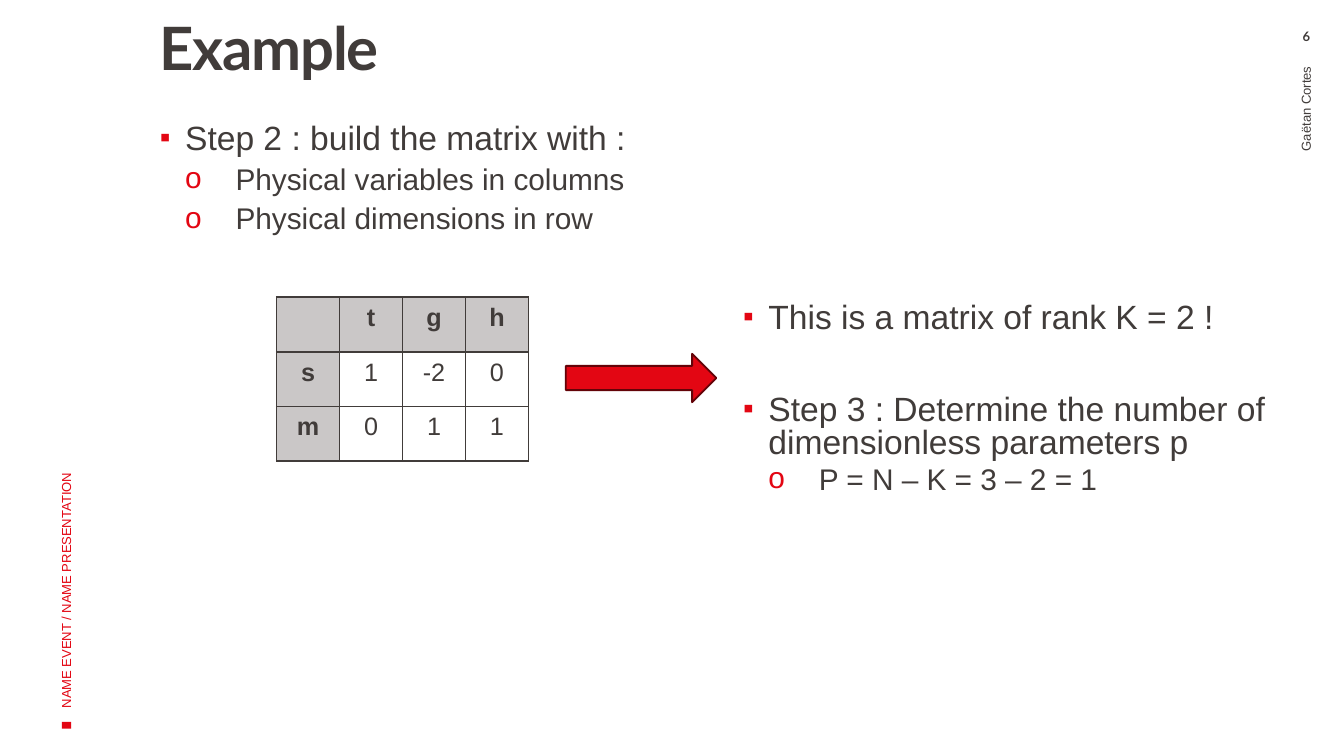
from lxml.etree import SubElement
from pptx import Presentation
from pptx.dml.color import RGBColor
from pptx.enum.shapes import MSO_SHAPE as Shape
from pptx.enum.text import MSO_ANCHOR as Anchor, MSO_AUTO_SIZE as AutoSize, PP_ALIGN as Align
from pptx.oxml.ns import qn
from pptx.util import Inches, Pt

WIDTH = Inches(10)
HEIGHT = WIDTH * 9 // 16
RED, DARK_RED, INK, GREY = "E30613", "630308", "413C3A", "CAC7C7"

STEP_TWO = [
    (0, "Step 2 : build the matrix with :", 0),
    (1, "Physical variables in columns", 3.8),
    (1, "Physical dimensions in row", 3.8),
]
STEP_THREE = [
    (0, "This is a matrix of rank K = 2 !", 0),
    (0, "Step 3 : Determine the number of dimensionless parameters p", 32),
    (1, "P = N – K = 3 – 2 = 1", 3.8),
]
MATRIX = [
    ["", "t", "g", "h"],
    ["s", "1", "-2", "0"],
    ["m", "0", "1", "1"],
]
LEVELS = [
    {"mark": "▪", "mark_size": 90, "margin": 13.5, "hang": 13.5, "size": 18},
    {"mark": "o", "mark_size": 100, "margin": 40.5, "hang": 27, "size": 16},
]


def color(value):
    return RGBColor.from_string(value)


def share(left, top, width, height):
    return (int(WIDTH * left / 100), int(HEIGHT * top / 100),
            int(WIDTH * width / 100), int(HEIGHT * height / 100))


def move(shape, area):
    shape.left, shape.top, shape.width, shape.height = share(*area)


def style(paragraph, size, tint=INK, bold=False, face="Arial"):
    font = paragraph.font
    font.name, font.size, font.bold = face, Pt(size), bold
    font.color.rgb = color(tint)


def set_frame(frame, insets, anchor=Anchor.TOP):
    frame.word_wrap = True
    frame.auto_size = AutoSize.NONE
    frame.vertical_anchor = anchor
    (frame.margin_left, frame.margin_top,
     frame.margin_right, frame.margin_bottom) = map(Inches, insets)


def add_bullet(paragraph, level):
    properties = paragraph._p.get_or_add_pPr()
    properties.set("marL", str(Pt(level["margin"])))
    properties.set("indent", str(-Pt(level["hang"])))
    tint = SubElement(properties, qn("a:buClr"))
    SubElement(tint, qn("a:srgbClr"), val=RED)
    SubElement(properties, qn("a:buSzPct"), val=str(level["mark_size"] * 1000))
    SubElement(properties, qn("a:buFont"), typeface="Arial")
    SubElement(properties, qn("a:buChar"), char=level["mark"])


def fill_title(title, text):
    move(title, (9.9, 2.49, 40.1, 20.82))
    set_frame(title.text_frame, (0.2, 0, 0.08, 0.05))
    paragraph = title.text_frame.paragraphs[0]
    run = paragraph.add_run()
    run.text = text
    run._r.get_or_add_rPr().set("spc", "-70")
    paragraph.alignment = Align.LEFT
    paragraph.line_spacing = 0.9
    style(paragraph, 32, bold=True, face="Lato")


def fill_list(body, area, items, line_spacing):
    move(body, area)
    frame = body.text_frame
    set_frame(frame, (0.2, 0.05, 0.1, 0.05))
    for index, (depth, text, space) in enumerate(items):
        paragraph = frame.paragraphs[0] if index == 0 else frame.add_paragraph()
        paragraph.text = text
        paragraph.level = depth
        paragraph.line_spacing = line_spacing
        paragraph.space_before = Pt(space)
        add_bullet(paragraph, LEVELS[depth])
        style(paragraph, LEVELS[depth]["size"])


def add_label(slide, area, text, align, tint=INK, rotation=0, bold=False,
              face="Arial", anchor=Anchor.MIDDLE, inset=0.05):
    label = slide.shapes.add_textbox(*share(*area))
    label.rotation = rotation
    set_frame(label.text_frame, (0.1, inset, 0.1, inset), anchor)
    paragraph = label.text_frame.paragraphs[0]
    paragraph.text = text
    paragraph.alignment = align
    style(paragraph, 7, tint, bold, face)


def add_block(slide, kind, area, line=None, rotation=0):
    block = slide.shapes.add_shape(kind, *share(*area))
    block.shadow.inherit = False
    block.rotation = rotation
    block.fill.solid()
    block.fill.fore_color.rgb = color(RED)
    if line:
        block.line.color.rgb = color(line)
        block.line.width = Pt(1)
    else:
        block.line.fill.background()


def add_borders(cell):
    properties = cell._tc.get_or_add_tcPr()
    for index, side in enumerate(("lnL", "lnR", "lnT", "lnB")):
        border = properties.makeelement(qn(f"a:{side}"), {"w": str(Pt(1))})
        fill = SubElement(border, qn("a:solidFill"))
        SubElement(fill, qn("a:srgbClr"), val=INK)
        properties.insert(index, border)


def add_matrix(slide, area, rows):
    table = slide.shapes.add_table(len(rows), len(rows[0]), *share(*area)).table
    for r, row in enumerate(rows):
        for c, text in enumerate(row):
            cell = table.cell(r, c)
            heading = r == 0 or c == 0
            if heading:
                cell.fill.solid()
                cell.fill.fore_color.rgb = color(GREY)
            else:
                cell.fill.background()
            add_borders(cell)
            paragraph = cell.text_frame.paragraphs[0]
            paragraph.text = text
            paragraph.alignment = Align.CENTER
            style(paragraph, 13.5, bold=heading)


def main():
    deck = Presentation()
    deck.slide_width, deck.slide_height = WIDTH, HEIGHT
    slide = deck.slides.add_slide(deck.slide_layouts[3])
    title, step_two, step_three = slide.placeholders

    add_block(slide, Shape.RECTANGLE, (4.7, 95.3, 0.5, 1.25), rotation=270)
    fill_title(title, "Example")
    add_label(slide, (-13.35, 54.09, 36.5, 17.79), "NAME EVENT / NAME PRESENTATION",
              Align.LEFT, RED, rotation=270)
    add_label(slide, (77.8, 36.48, 38.7, 9.96), "Gaëtan Cortes", Align.RIGHT, rotation=270)
    add_label(slide, (94.4, 3.74, 5.6, 3.2), "6", Align.CENTER, bold=True,
              face="Lato", anchor=Anchor.TOP, inset=0)
    fill_list(step_two, (9.9, 15.12, 84.5, 81.14), STEP_TWO, 0.9)
    add_matrix(slide, (20.58, 39.32, 18.75, 21.7), MATRIX)
    add_block(slide, Shape.RIGHT_ARROW, (42.1, 46.8, 11.2, 6.41), DARK_RED)
    fill_list(step_three, (53.3, 39.32, 43.2, 28.83), STEP_THREE, 0.8)
    deck.save("out.pptx")


if __name__ == "__main__":
    main()
